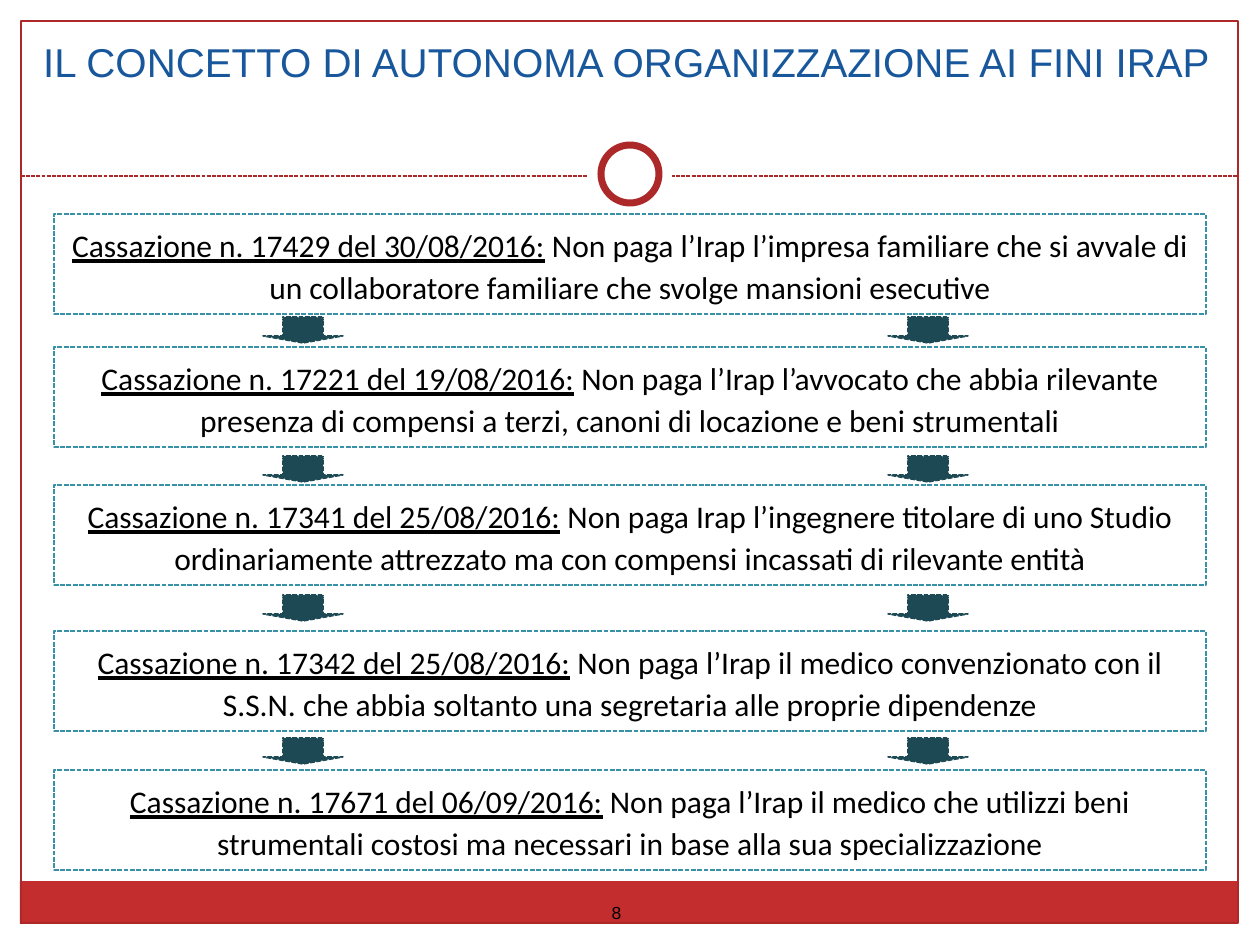
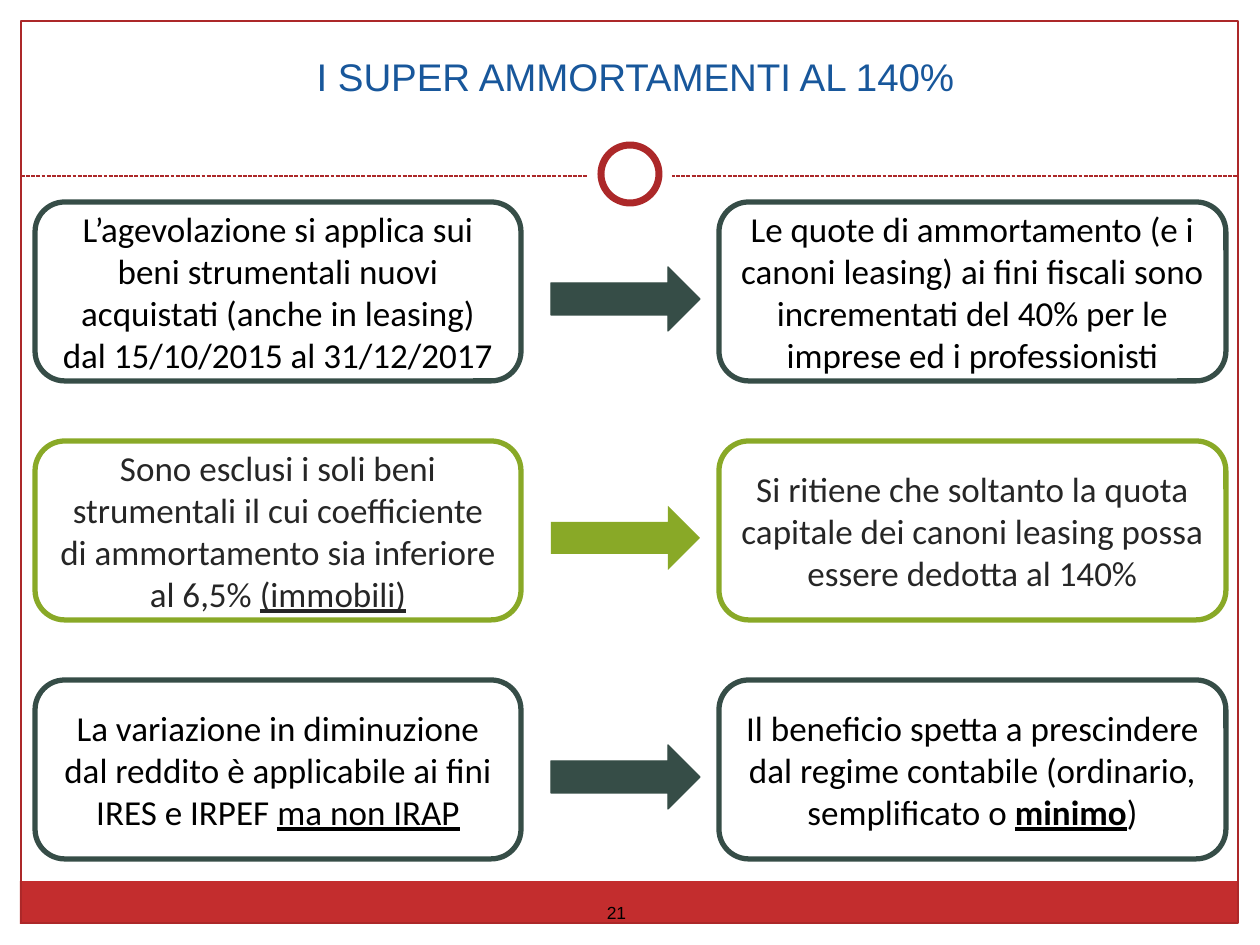
from pptx import Presentation
from pptx.dml.color import RGBColor
from pptx.enum.dml import MSO_LINE
from pptx.enum.shapes import MSO_CONNECTOR, MSO_SHAPE
from pptx.enum.text import MSO_ANCHOR, MSO_AUTO_SIZE, PP_ALIGN
from pptx.oxml.ns import qn
from pptx.util import Emu, Pt
from lxml import etree

RECTANGLE = MSO_SHAPE.RECTANGLE
ROUNDED = MSO_SHAPE.ROUNDED_RECTANGLE
OVAL = MSO_SHAPE.OVAL
RIGHT_ARROW = MSO_SHAPE.RIGHT_ARROW
STRIPED_ARROW = MSO_SHAPE.STRIPED_RIGHT_ARROW
STRAIGHT = MSO_CONNECTOR.STRAIGHT
SYS_DASH = MSO_LINE.SQUARE_DOT
MIDDLE = MSO_ANCHOR.MIDDLE
CENTER = PP_ALIGN.CENTER
NO_FIT = MSO_AUTO_SIZE.NONE

WHITE = RGBColor(0xFF, 0xFF, 0xFF)
BLACK = RGBColor(0x00, 0x00, 0x00)
CHARCOAL = RGBColor(0x26, 0x26, 0x26)
BAND_RED = RGBColor(0xC3, 0x2D, 0x2E)
FRAME_RED = RGBColor(0xAC, 0x28, 0x29)
TITLE_BLUE = RGBColor(0x18, 0x57, 0x9B)
RULING_BLUE = RGBColor(0x38, 0x91, 0xA7)
ARROW_TEAL = RGBColor(0x1C, 0x49, 0x54)
DARK_GREEN = RGBColor(0x36, 0x4D, 0x47)
LIME = RGBColor(0x89, 0xA9, 0x27)

PX_PER_INCH = 126
TITLE_ONLY = 5

RULING_TOPS = (214, 347, 485, 631, 770)
RULINGS = (
    ("Cassazione n. 17429 del 30/08/2016:",
     " Non paga l’Irap l’impresa familiare che si avvale di un collaboratore familiare che svolge mansioni esecutive"),
    ("Cassazione n. 17221 del 19/08/2016:",
     " Non paga l’Irap l’avvocato che abbia rilevante presenza di compensi a terzi, canoni di locazione e beni strumentali"),
    ("Cassazione n. 17341 del 25/08/2016:",
     " Non paga Irap l’ingegnere titolare di uno Studio ordinariamente attrezzato ma con compensi incassati di rilevante entità"),
    ("Cassazione n. 17342 del 25/08/2016:",
     " Non paga l’Irap il medico convenzionato con il S.S.N. che abbia soltanto una segretaria alle proprie dipendenze"),
    ("Cassazione n. 17671 del 06/09/2016:",
     " Non paga l’Irap il medico che utilizzi beni strumentali costosi ma necessari in base alla sua specializzazione"),
)
DOWN_ARROW_XS = (303, 928)
DOWN_ARROW_YS = (330, 469, 608, 751)

RULE_TOP, RULE_PITCH, RULE_HEIGHT = 202, 239, 179
DEPRECIATION_RULES = (
    (DARK_GREEN, BLACK,
     [("L’agevolazione si applica sui beni strumentali nuovi acquistati (anche in leasing) dal 15/10/2015 al 31/12/2017", "")],
     [("Le quote di ammortamento (e i canoni leasing) ai fini fiscali sono incrementati del 40% per le imprese ed i professionisti", "")]),
    (LIME, CHARCOAL,
     [("Sono esclusi i soli beni strumentali il cui coefficiente di ammortamento sia inferiore al 6,5% ", ""),
      ("(immobili)", "u")],
     [("Si ritiene che soltanto la quota capitale dei canoni leasing possa essere dedotta al 140%", "")]),
    (DARK_GREEN, BLACK,
     [("La variazione in diminuzione dal reddito è applicabile ai fini IRES e IRPEF ", ""),
      ("ma non IRAP", "u")],
     [("Il beneficio spetta a prescindere dal regime contabile (ordinario, semplificato o ", ""),
      ("minimo", "bu"), (")", "")]),
)


def px(length):
    return Emu(round(length * 914400 / PX_PER_INCH))


def format_run(run, font, size, color):
    run.font.name = font
    run.font.size = Pt(size)
    run.font.color.rgb = color


def set_line(line, color, width, dash=None):
    line.color.rgb = color
    line.width = Pt(width)
    if dash is not None:
        line.dash_style = dash


def add_block(slide, kind, box, fill=None, line=None):
    block = slide.shapes.add_shape(kind, *map(px, box))
    block.shadow.inherit = False
    if fill is None:
        block.fill.background()
    else:
        block.fill.solid()
        block.fill.fore_color.rgb = fill
    if line is None:
        block.line.fill.background()
    else:
        set_line(block.line, *line)
    return block


def write_segments(block, segments, size, color, spacing=None):
    frame = block.text_frame
    frame.word_wrap = True
    frame.vertical_anchor = MIDDLE
    paragraph = frame.paragraphs[0]
    paragraph.alignment = CENTER
    if spacing:
        paragraph.line_spacing = Pt(spacing)
    for text, style in segments:
        run = paragraph.add_run()
        run.text = text
        format_run(run, "Calibri", size, color)
        run.font.underline = "u" in style
        run.font.bold = "b" in style


def write_line(holder, text, size, color):
    frame = holder.text_frame
    frame.text = text
    frame.word_wrap = True
    frame.auto_size = NO_FIT
    frame.vertical_anchor = MIDDLE
    paragraph = frame.paragraphs[0]
    paragraph.alignment = CENTER
    format_run(paragraph.runs[0], "Arial", size, color)


def add_divider(slide):
    divider = slide.shapes.add_connector(STRAIGHT, px(21), px(176), px(1239), px(176))
    set_line(divider.line, FRAME_RED, 0.75, SYS_DASH)
    etree.SubElement(divider._element.spPr, qn("a:effectLst"))


def add_framed_slide(prs, title, title_box, title_size, number):
    slide = prs.slides.add_slide(prs.slide_layouts[TITLE_ONLY])
    heading = slide.shapes.title
    heading.left, heading.top, heading.width, heading.height = map(px, title_box)
    write_line(heading, title, title_size, TITLE_BLUE)
    add_block(slide, RECTANGLE, (20, 881, 1218, 43), BAND_RED)
    add_block(slide, RECTANGLE, (21, 21, 1217, 902), line=(FRAME_RED, 0.75))
    add_divider(slide)
    add_block(slide, OVAL, (588, 132, 84, 84), WHITE)
    add_block(slide, OVAL, (601, 145, 58, 58), WHITE, (FRAME_RED, 4))
    page_number = slide.shapes.add_textbox(*map(px, (591, 896, 51, 33)))
    write_line(page_number, number, 10, BLACK)
    return slide


def add_ruling(slide, top, citation, outcome):
    box = add_block(slide, RECTANGLE, (54, top, 1152, 100), WHITE,
                    (RULING_BLUE, 0.9, SYS_DASH))
    write_segments(box, [(citation, "u"), (outcome, "")], 18, BLACK, spacing=24)


def add_down_arrow(slide, center_x, center_y):
    length, breadth = 26, 80
    box = (center_x - length // 2, center_y - breadth // 2, length, breadth)
    arrow = add_block(slide, STRIPED_ARROW, box, ARROW_TEAL,
                      (ARROW_TEAL, 0.9, SYS_DASH))
    arrow.adjustments[1] = 0.27
    arrow.rotation = 90


def add_rule_row(slide, top, accent, text_color, premise, consequence):
    for left, width, segments in ((35, 486, premise), (719, 507, consequence)):
        box = add_block(slide, ROUNDED, (left, top, width, RULE_HEIGHT), line=(accent, 3))
        write_segments(box, segments, 20, text_color)
    outline = (accent, 0.75) if accent == DARK_GREEN else None
    add_block(slide, RIGHT_ARROW, (551, top + 65, 149, 64), accent, outline)


def build_rulings(prs):
    slide = add_framed_slide(prs, "IL CONCETTO DI AUTONOMA ORGANIZZAZIONE AI FINI IRAP",
                             (10, 16, 1235, 90), 23, "8")
    for top, (citation, outcome) in zip(RULING_TOPS, RULINGS):
        add_ruling(slide, top, citation, outcome)
    for center_y in DOWN_ARROW_YS:
        for center_x in DOWN_ARROW_XS:
            add_down_arrow(slide, center_x, center_y)


def build_depreciation(prs):
    slide = add_framed_slide(prs, "I SUPER AMMORTAMENTI AL 140%",
                             (273, 45, 725, 63), 22, "21")
    for row, rule in enumerate(DEPRECIATION_RULES):
        add_rule_row(slide, RULE_TOP + row * RULE_PITCH, *rule)


def main():
    prs = Presentation()
    prs.slide_width, prs.slide_height = px(1260), px(945)
    build_rulings(prs)
    build_depreciation(prs)
    prs.save("out.pptx")


if __name__ == "__main__":
    main()
